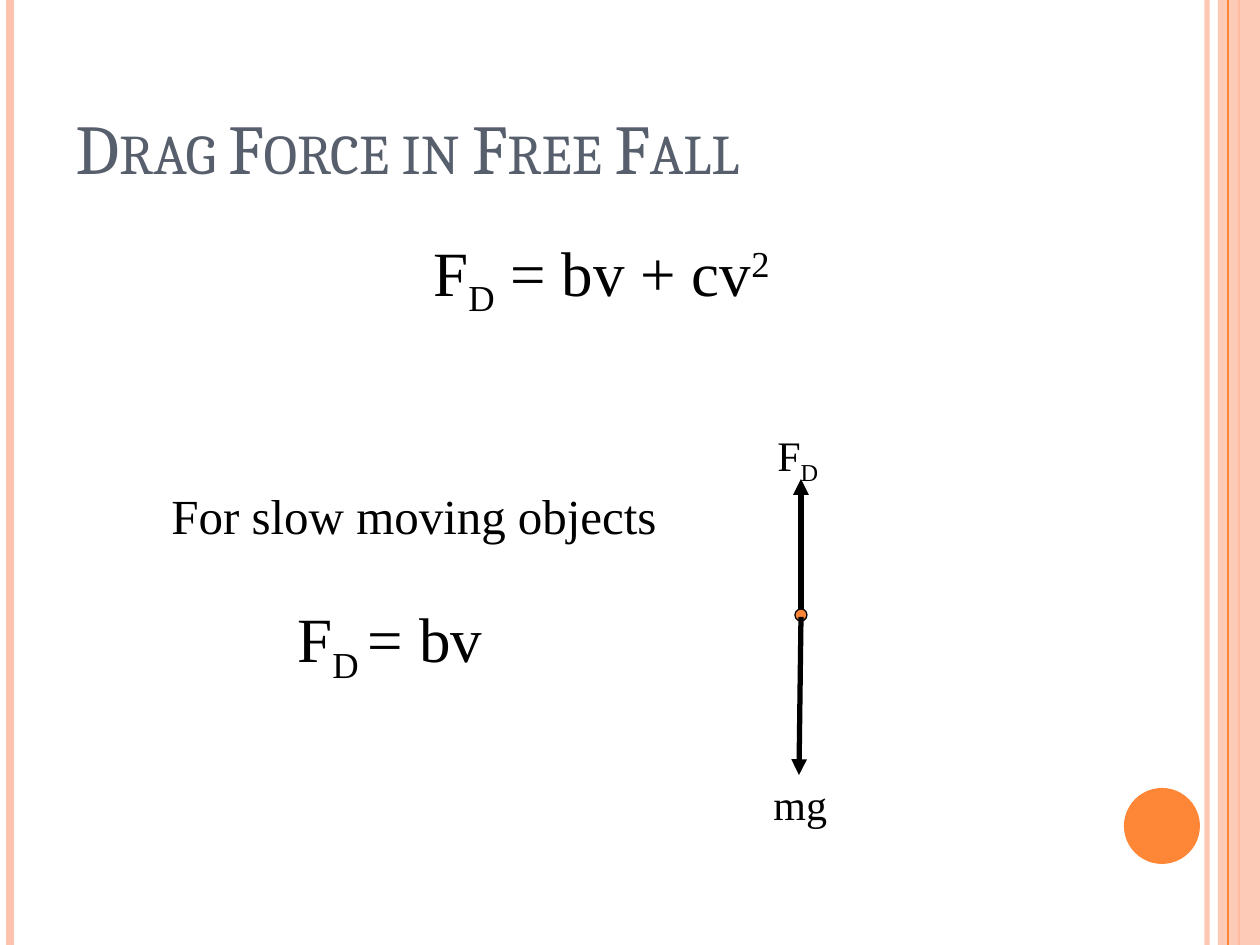
from lxml import etree
from pptx import Presentation
from pptx.dml.color import RGBColor
from pptx.enum.shapes import MSO_CONNECTOR, MSO_SHAPE
from pptx.enum.text import MSO_ANCHOR, MSO_AUTO_SIZE
from pptx.oxml.ns import qn
from pptx.util import Emu, Pt

STRAIGHT = MSO_CONNECTOR.STRAIGHT
RECT, OVAL = MSO_SHAPE.RECTANGLE, MSO_SHAPE.OVAL
BOTTOM, TOP = MSO_ANCHOR.BOTTOM, MSO_ANCHOR.TOP
FIT = MSO_AUTO_SIZE.SHAPE_TO_FIT_TEXT

PEACH = RGBColor(0xFE, 0xC3, 0xAE)
ORANGE = RGBColor(0xFE, 0x86, 0x37)
SLATE = RGBColor(0x57, 0x5F, 0x6D)
BLACK = RGBColor(0, 0, 0)
WHITE = RGBColor(0xFF, 0xFF, 0xFF)

WIDTH, HEIGHT = 1260, 945
SUB, SUPER = -25, 30
BODY_FONT = "Times New Roman"

LEFT_STRIPES = [(1207, PEACH, 3, 93), (10, PEACH, 4.5, 100), (1239, ORANGE, 1.5, 100)]
BAND = (1218, 0, 42, HEIGHT)
BAND_STRIPE = (1228, ORANGE, 0.75, 100)
BADGE = (1124, 788, 76, 76)

TITLE = ((63, 38, 1029, 157), "Drag Force in Free Fall")
DRAG_LAW = ((421, 227, 384, 88), 36, [("F", 0), ("D", SUB), (" = bv + cv", 0), ("2", SUPER)])
SLOW_CASE = (159, 479, 534, 318)
SLOW_LABEL = [("For slow moving objects", 0)]
SLOW_LAW = [("F", 0), ("D ", SUB), ("= bv", 0)]
SLOW_INDENT = 126

BALL = (795, 609, 12, 12)
FORCES = [((801, 609), (801, 479)), ((801, 617), (799, 775))]
FORCE_LABELS = [
    ((761, 772, 79, 63), 24, [("mg", 0)]),
    ((765, 423, 69, 63), 24, [("F", 0), ("D", SUB)]),
]


def px(n):
    return Emu(round(n * 914400 / 126))


def set_alpha(fill, percent):
    color = fill._xPr.find(qn("a:solidFill"))[0]
    etree.SubElement(color, qn("a:alpha")).set("val", str(percent * 1000))


def add_line(shapes, start, end, color, width, alpha=100, arrow=False):
    line = shapes.add_connector(STRAIGHT, *map(px, start + end))
    line.line.color.rgb = color
    line.line.width = Pt(width)
    if alpha < 100:
        set_alpha(line.line.fill, alpha)
    sp_pr = line._element.spPr
    if arrow:
        etree.SubElement(sp_pr.find(qn("a:ln")), qn("a:tailEnd")).set("type", "triangle")
    etree.SubElement(sp_pr, qn("a:effectLst"))


def add_stripe(shapes, x, color, width, alpha):
    add_line(shapes, (x, 0), (x, HEIGHT), color, width, alpha)


def add_filled(shapes, kind, box, color):
    sp = shapes.add_shape(kind, *map(px, box))
    sp.shadow.inherit = False
    sp.fill.solid()
    sp.fill.fore_color.rgb = color
    sp.line.fill.background()
    return sp


def write(p, runs, size, color=BLACK, font=BODY_FONT):
    p.font.size = Pt(size)
    p.font.name = font
    p.font.color.rgb = color
    for text, baseline in runs:
        r = p.add_run()
        r.text = text
        if baseline:
            r.font._element.set("baseline", str(baseline * 1000))


def add_label(shapes, box, size, runs):
    tf = shapes.add_textbox(*map(px, box)).text_frame
    tf.word_wrap = False
    tf.auto_size = FIT
    write(tf.paragraphs[0], runs, size)


prs = Presentation()
prs.slide_width, prs.slide_height = px(WIDTH), px(HEIGHT)
slide = prs.slides.add_slide(prs.slide_layouts[6])
s = slide.shapes

for stripe in LEFT_STRIPES:
    add_stripe(s, *stripe)
band = add_filled(s, RECT, BAND, PEACH)
set_alpha(band.fill, 87)
add_stripe(s, *BAND_STRIPE)
add_filled(s, OVAL, BADGE, ORANGE)

title_box, title_text = TITLE
tf = s.add_textbox(*map(px, title_box)).text_frame
tf.word_wrap = True
tf.vertical_anchor = BOTTOM
p = tf.paragraphs[0]
write(p, [(title_text, 0)], 40, SLATE, "Cambria")
p.runs[0].font._element.set("cap", "small")

add_label(s, *DRAG_LAW)

slow = s.add_textbox(*map(px, SLOW_CASE))
slow.line.color.rgb = WHITE
slow.line.width = Pt(2.25)
tf = slow.text_frame
tf.word_wrap = True
tf.vertical_anchor = TOP
write(tf.paragraphs[0], SLOW_LABEL, 28)
p = tf.add_paragraph()
write(p, SLOW_LAW, 36)
p.space_before = Pt(32)
p._p.get_or_add_pPr().set("marL", str(px(SLOW_INDENT)))

diagram = s.add_group_shape().shapes
ball = add_filled(diagram, OVAL, BALL, ORANGE)
ball.line.color.rgb = BLACK
ball.line.width = Pt(0.75)
for start, end in FORCES:
    add_line(diagram, start, end, BLACK, 3, arrow=True)
for label in FORCE_LABELS:
    add_label(diagram, *label)

prs.save("out.pptx")
